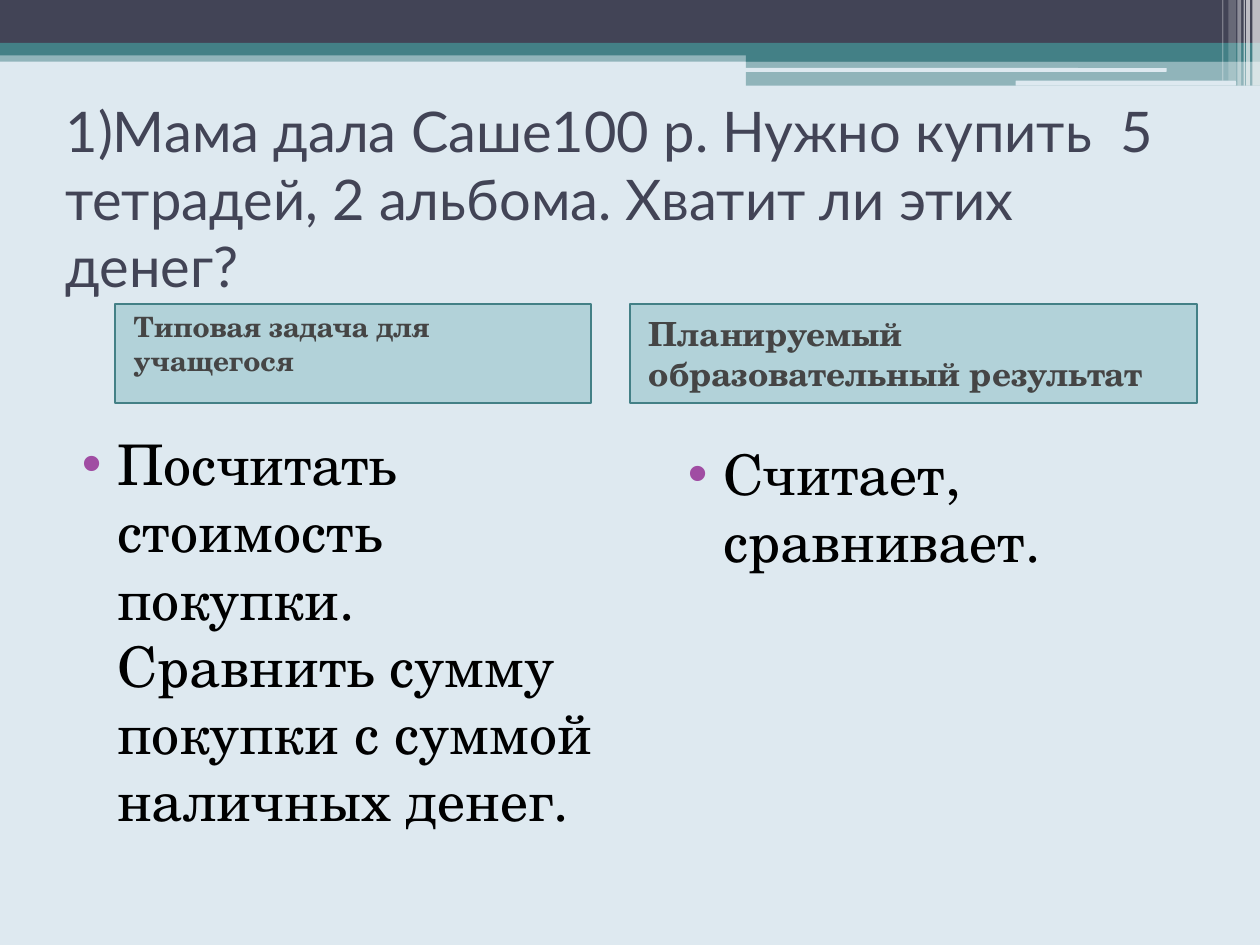
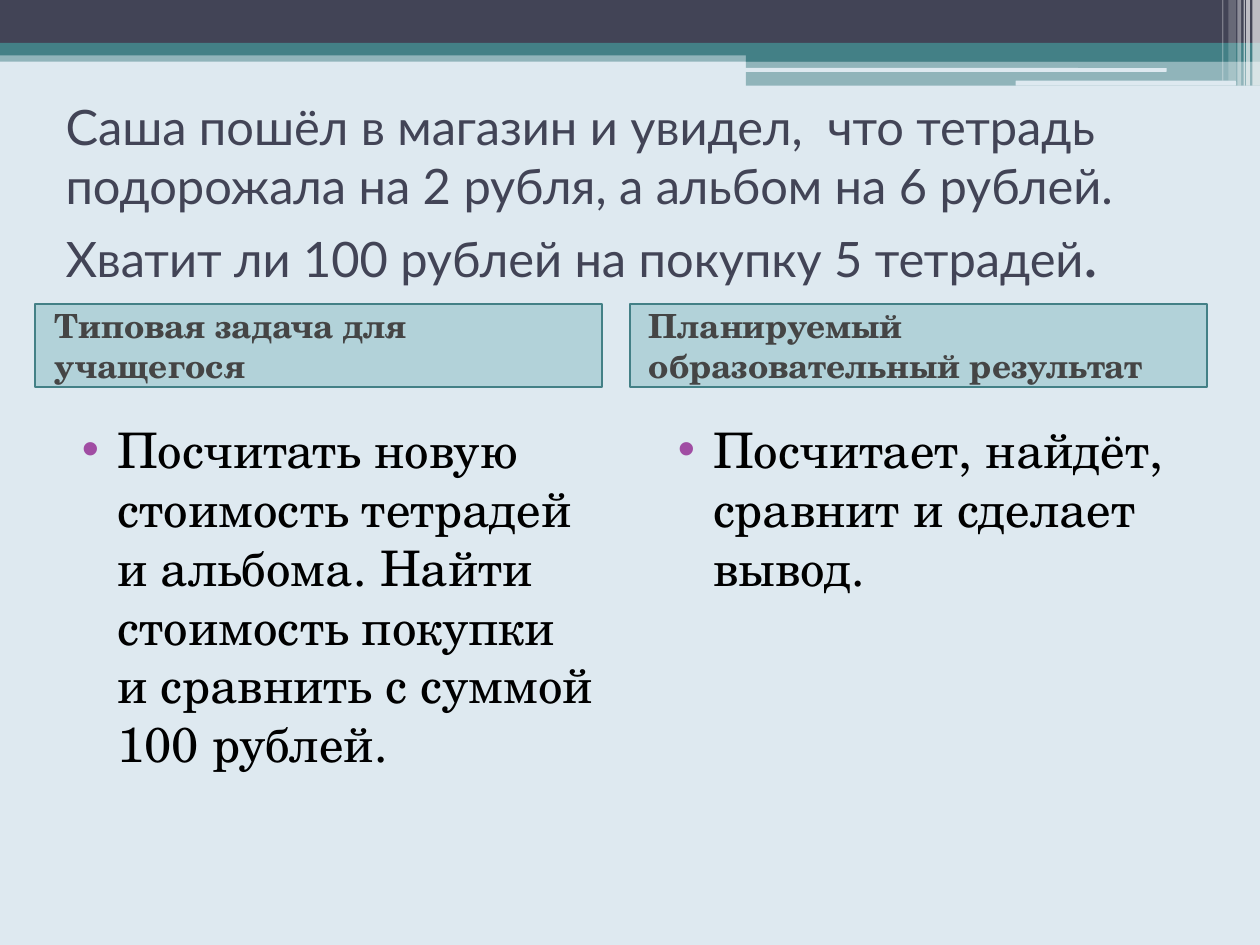
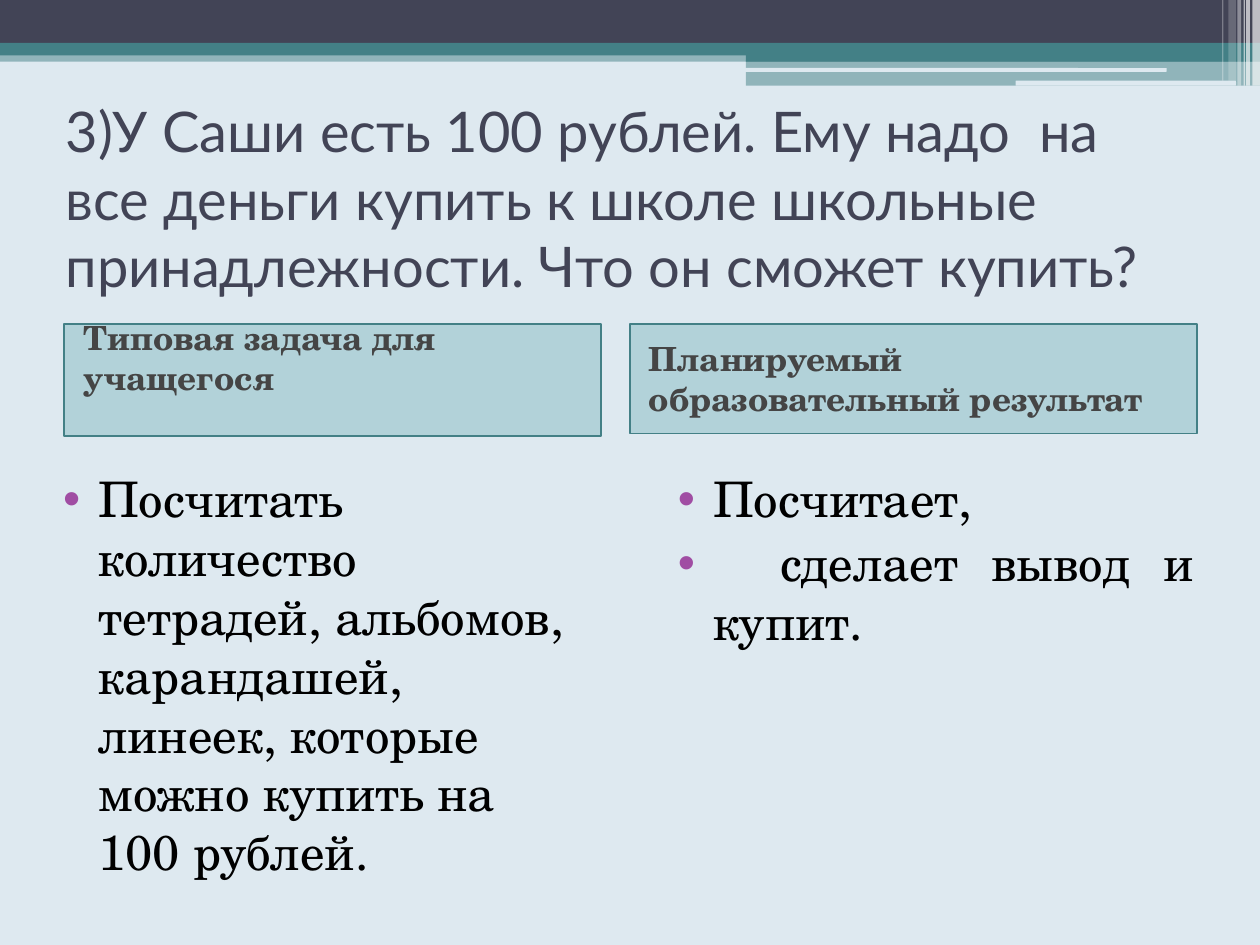
import pptx
import pptx.util
import pptx.dml.color
import pptx.enum.shapes
import pptx.enum.text
import pptx.oxml
import pptx.oxml.ns

Inches, Pt = pptx.util.Inches, pptx.util.Pt
ANCHOR, ALIGN = pptx.enum.text.MSO_ANCHOR, pptx.enum.text.PP_ALIGN
RECT = pptx.enum.shapes.MSO_SHAPE.RECTANGLE
ROUND = pptx.enum.shapes.MSO_SHAPE.ROUNDED_RECTANGLE

SANS, SERIF = "Lato", "TeX Gyre Schola"
PALE, NAVY, TEAL, WHITE = "DEE9F0", "424456", "438086", "FFFFFF"
AQUA, GREY, BLACK, PURPLE = "328E97", "454545", "000000", "A04DA3"
INSET = 0.05

# left, top, width, height, preset, colour, opacity in percent
BANDS = [
    (0, 0.4, 10, 0.09, RECT, TEAL, 50),
    (0, 0, 10, 0.34, RECT, NAVY, 100),
    (0, 0.34, 10, 0.1, RECT, TEAL, 100),
    (5.92, 0.39, 4.08, 0.1, RECT, TEAL, 100),
    (5.92, 0.48, 4.08, 0.2, RECT, TEAL, 50),
    (5.91, 0.54, 3.35, 0.03, ROUND, PALE, 100),
    (8.06, 0.64, 1.75, 0.04, ROUND, PALE, 100),
]
# left, width, height, opacity in percent
STRIPES = [
    (9.94, 0.06, 0.68, 65), (9.89, 0.03, 0.68, 65), (9.87, 0.01, 0.68, 60),
    (9.82, 0.03, 0.68, 40), (9.75, 0.06, 0.64, 20), (9.7, 0.01, 0.64, 30),
]
BANDS += [(x, 0, w, h, RECT, WHITE, a) for x, w, h, a in STRIPES]

TITLE_BOX = (0.42, 1.25, 9.17, 1.17)
TASK = "Типовая задача для учащегося"
RESULT = "Планируемый образовательный результат"


def paint(fill, hue, alpha=100):
    fill.solid()
    fill.fore_color.rgb = pptx.dml.color.RGBColor.from_string(hue)
    if alpha < 100:
        tag = f'<a:alpha {pptx.oxml.ns.nsdecls("a")} val="{alpha * 1000}"/>'
        color = fill._xPr.find(".//" + pptx.oxml.ns.qn("a:srgbClr"))
        color.append(pptx.oxml.parse_xml(tag))


def add_bands(slide, master):
    """Draw the top bands on a slide, then move them to the master."""
    for num, (x, y, w, h, kind, hue, alpha) in enumerate(BANDS, 101):
        band = slide.shapes.add_shape(kind, *map(Inches, (x, y, w, h)))
        band.shadow.inherit = False
        paint(band.fill, hue, alpha)
        band.line.fill.background()
        band.element.nvSpPr.cNvPr.set("id", str(num))
        master.shapes.element.append(band.element)


def place(shape, box, anchor, gap=0):
    """Set a placeholder's box; gap is kept free below its text."""
    shape.left, shape.top, shape.width, shape.height = map(Inches, box)
    frame = shape.text_frame
    frame.word_wrap = True
    frame.auto_size = pptx.enum.text.MSO_AUTO_SIZE.NONE
    frame.vertical_anchor = anchor
    frame.margin_bottom = Inches(INSET + gap)
    return frame


def add_run(para, text, size, face, hue, bold=False):
    run = para.add_run()
    run.text = text
    run.font.size, run.font.name, run.font.bold = Pt(size), face, bold
    paint(run.font.fill, hue)


def indent(para, left, first=0):
    para.space_before = Pt(3)
    props = para._p.get_or_add_pPr()
    props.set("marL", str(Inches(left)))
    props.set("indent", str(Inches(first)))
    return props


def add_title(shape, runs):
    line = runs[-1][1] * 1.2 / 72
    para = place(shape, TITLE_BOX, ANCHOR.MIDDLE, line).paragraphs[0]
    para.alignment = ALIGN.LEFT
    for text, size in runs:
        add_run(para, text, size, SANS, NAVY)


def add_head(shape, text, box, size=19, anchor=ANCHOR.MIDDLE, gap=0):
    para = place(shape, box, anchor, gap).paragraphs[0]
    paint(shape.fill, AQUA, 25)
    paint(shape.line.fill, TEAL)
    shape.line.width = Pt(1)
    indent(para, 0.05)
    add_run(para, text, size, SERIF, GREY, True)


def add_list(shape, items, box, size=28, align=ALIGN.LEFT):
    frame = place(shape, box, ANCHOR.TOP)
    for num, text in enumerate(items):
        para = frame.add_paragraph() if num else frame.paragraphs[0]
        para.alignment = align
        props = indent(para, 0.4, -0.28)
        space = pptx.oxml.ns.nsdecls("a")
        for tag in (f'<a:buClr {space}><a:srgbClr val="{PURPLE}"/></a:buClr>',
                    f'<a:buChar {space} char="•"/>'):
            props.append(pptx.oxml.parse_xml(tag))
        add_run(para, text, size, SERIF, BLACK)


def add_slide(deck, title, heads, lists):
    """Add a comparison slide: title, two headings and a list under each."""
    slide = deck.slides.add_slide(deck.slide_layouts[4])
    holders = slide.placeholders
    add_title(holders[0], title)
    for idx, text, head, items in zip((1, 3), (TASK, RESULT), heads, lists):
        add_head(holders[idx], text, **head)
        add_list(holders[idx + 1], **items)
    return slide


SLIDES = [
    dict(
        title=[("1)Мама дала Саше100 р. Нужно купить  5 тетрадей, 2 альбома. "
                "Хватит ли этих денег?", 32)],
        heads=[dict(box=(0.91, 2.41, 3.78, 0.79), size=16, anchor=ANCHOR.TOP),
               dict(box=(5, 2.41, 4.5, 0.79))],
        lists=[dict(items=["Посчитать стоимость покупки. Сравнить сумму "
                           "покупки с суммой наличных денег."],
                    box=(0.43, 3.36, 4.4, 3.86), size=32),
               dict(items=["Считает, сравнивает."],
                    box=(5.24, 3.44, 4.34, 3.78), size=32)],
    ),
    dict(
        title=[("Саша пошёл в магазин и увидел,  что тетрадь подорожала на "
                "2 рубля, а альбом на 6 рублей. Хватит ли 100 рублей на "
                "покупку 5 тетрадей", 27.9), (".", 36)],
        heads=[dict(box=(0.28, 2.41, 4.5, 0.66)),
               dict(box=(5, 2.41, 4.58, 0.66))],
        lists=[dict(items=["Посчитать новую стоимость тетрадей и альбома. "
                           "Найти стоимость покупки и сравнить с суммой "
                           "100 рублей."],
                    box=(0.43, 3.28, 4.4, 3.93)),
               dict(items=["Посчитает, найдёт, сравнит и сделает вывод."],
                    box=(5.16, 3.28, 4.42, 3.93))],
    ),
    dict(
        title=[("3)У Саши есть 100 рублей. Ему надо  на все деньги купить к "
                "школе школьные принадлежности. Что он сможет купить?", 32)],
        heads=[dict(box=(0.51, 2.57, 4.26, 0.89), gap=0.36),
               dict(box=(5, 2.57, 4.5, 0.87))],
        lists=[dict(items=["Посчитать количество тетрадей, альбомов, "
                           "карандашей, линеек, которые можно купить на "
                           "100 рублей."],
                    box=(0.28, 3.67, 4.42, 4.25)),
               dict(items=["Посчитает,", "  сделает вывод и купит."],
                    box=(5.16, 3.67, 4.42, 4.25), align=ALIGN.JUSTIFY)],
    ),
]


def main():
    deck = pptx.Presentation()
    deck.slide_width, deck.slide_height = Inches(10), Inches(7.5)
    paint(deck.slide_master.background.fill, PALE)
    for parts in SLIDES:
        add_slide(deck, **parts)
    add_bands(deck.slides[0], deck.slide_master)
    deck.save("out.pptx")


if __name__ == "__main__":
    main()
